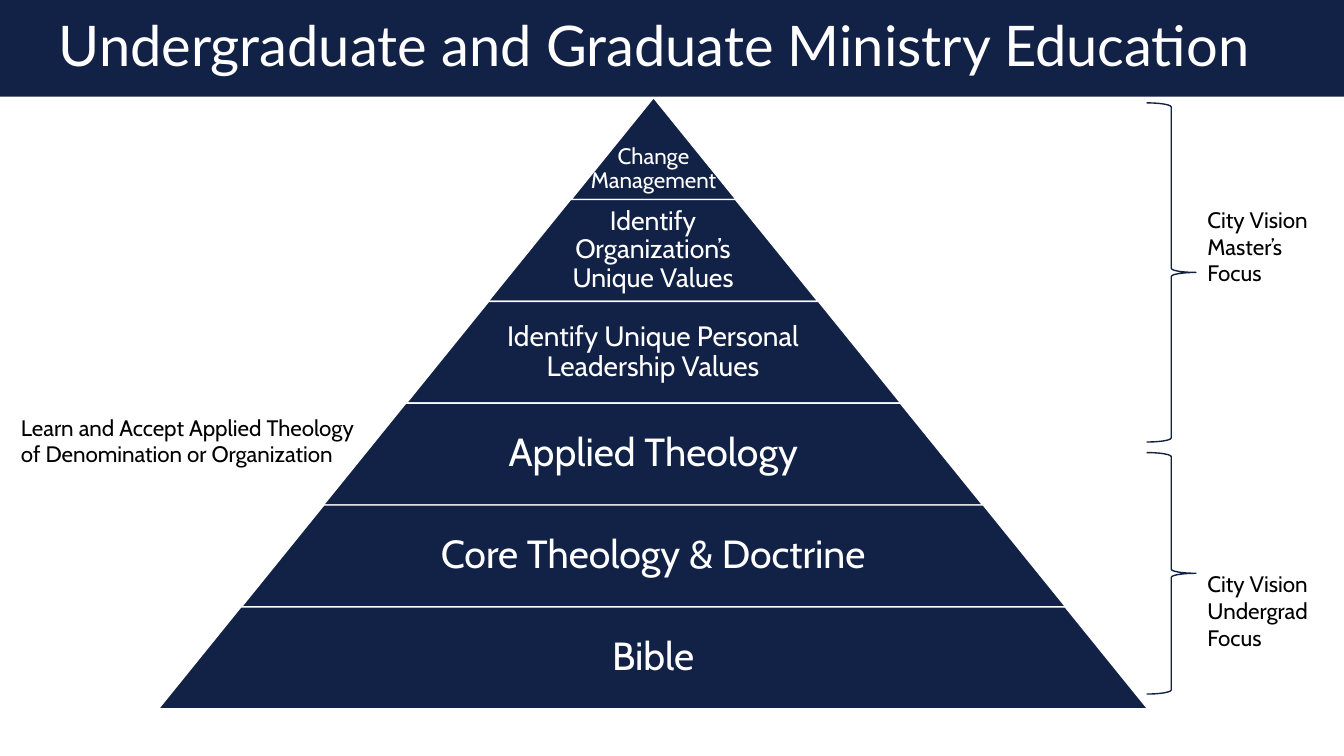
from dataclasses import dataclass

from pptx import Presentation
from pptx.dml.color import RGBColor
from pptx.enum.shapes import MSO_SHAPE as Preset
from pptx.enum.text import MSO_ANCHOR as Anchor, PP_ALIGN as Align
from pptx.util import Pt

EMU_PER_PX = 9525


def px(length):
    return length * EMU_PER_PX


@dataclass(frozen=True)
class Theme:
    navy: RGBColor = RGBColor(0x12, 0x21, 0x46)
    white: RGBColor = RGBColor(0xFF, 0xFF, 0xFF)
    black: RGBColor = RGBColor(0, 0, 0)
    title_font: str = "Lato"
    body_font: str = "Cabin"
    title_size: int = 40
    label_size: int = 16
    tier_sizes: tuple = (16, 19, 20, 28, 28, 28)
    tight: float = 0.9


class SlideBuilder:
    def __init__(self, slide, theme):
        self.shapes = slide.shapes
        self.theme = theme

    def shape(self, preset, box, fill=None, line=None):
        shape = self.shapes.add_shape(preset, *map(px, box))
        shape.shadow.inherit = False
        if fill is None:
            shape.fill.background()
        else:
            shape.fill.solid()
            shape.fill.fore_color.rgb = fill
        if line is None:
            shape.line.fill.background()
        else:
            shape.line.color.rgb = line
            shape.line.width = Pt(1)
        return shape

    def text(self, words, box, size, color, font=None, align=Align.LEFT,
             anchor=Anchor.TOP, spacing=1.0, insets=(10, 5, 10, 5)):
        frame = self.shapes.add_textbox(*map(px, box)).text_frame
        frame.word_wrap = True
        frame.vertical_anchor = anchor
        (frame.margin_left, frame.margin_top,
         frame.margin_right, frame.margin_bottom) = map(px, insets)
        frame.text = words
        for paragraph in frame.paragraphs:
            paragraph.alignment = align
            paragraph.line_spacing = spacing
            for run in paragraph.runs:
                run.font.name = font or self.theme.body_font
                run.font.size = Pt(size)
                run.font.color.rgb = color

    def banner(self, words):
        theme = self.theme
        self.shape(Preset.RECTANGLE, (0, 0, 1280, 92), fill=theme.navy)
        self.text(words, (46, 11, 1177, 71), theme.title_size, theme.white,
                  font=theme.title_font, anchor=Anchor.MIDDLE, spacing=theme.tight)

    def pyramid(self, tiers, center, top, step, height):
        """Stack tiers from the apex down, each one step wider than the last."""
        theme = self.theme
        for level, (words, size) in enumerate(zip(tiers, theme.tier_sizes)):
            width = step * (level + 1)
            y = top + height * level
            tier = self.shape(Preset.TRAPEZOID, (center - width // 2, y, width, height),
                              fill=theme.navy, line=theme.white)
            tier.adjustments[0] = step / 2 / height
            # The apex is narrow, so its words sit at the base
            apex = level == 0
            words_width = width if apex else width * 65 // 100
            self.text(words, (center - words_width // 2, y, words_width, height),
                      size, theme.white, align=Align.CENTER,
                      anchor=Anchor.BOTTOM if apex else Anchor.MIDDLE,
                      spacing=theme.tight, insets=(0, 3, 0, 6 if apex else 3))

    def label(self, words, box):
        self.text(words, box, self.theme.label_size, self.theme.black)

    def focus(self, words, brace_top, brace_height, label_top):
        self.shape(Preset.RIGHT_BRACE, (1092, brace_top, 47, brace_height),
                   line=self.theme.navy)
        self.label(words, (1140, label_top, 140, 87))


def main():
    deck = Presentation()
    deck.slide_width, deck.slide_height = px(1280), px(720)
    builder = SlideBuilder(deck.slides.add_slide(deck.slide_layouts[6]), Theme())

    # Title banner
    builder.banner("Undergraduate and Graduate Ministry Education")

    # Pyramid, apex first
    builder.pyramid(
        ["Change\vManagement",
         "Identify\vOrganization’s\vUnique Values",
         "Identify Unique Personal Leadership Values",
         "Applied Theology",
         "Core Theology & Doctrine",
         "Bible"],
        center=622, top=93, step=157, height=97)

    # Side note on applied theology
    builder.label("Learn and Accept Applied Theology\vof Denomination or Organization",
                  (10, 389, 405, 61))

    # Degree focus braces
    builder.focus("City Vision\vUndergrad\nFocus", 431, 230, 538)
    builder.focus("City Vision\vMaster’s\nFocus", 98, 323, 191)

    deck.save("out.pptx")


if __name__ == "__main__":
    main()
